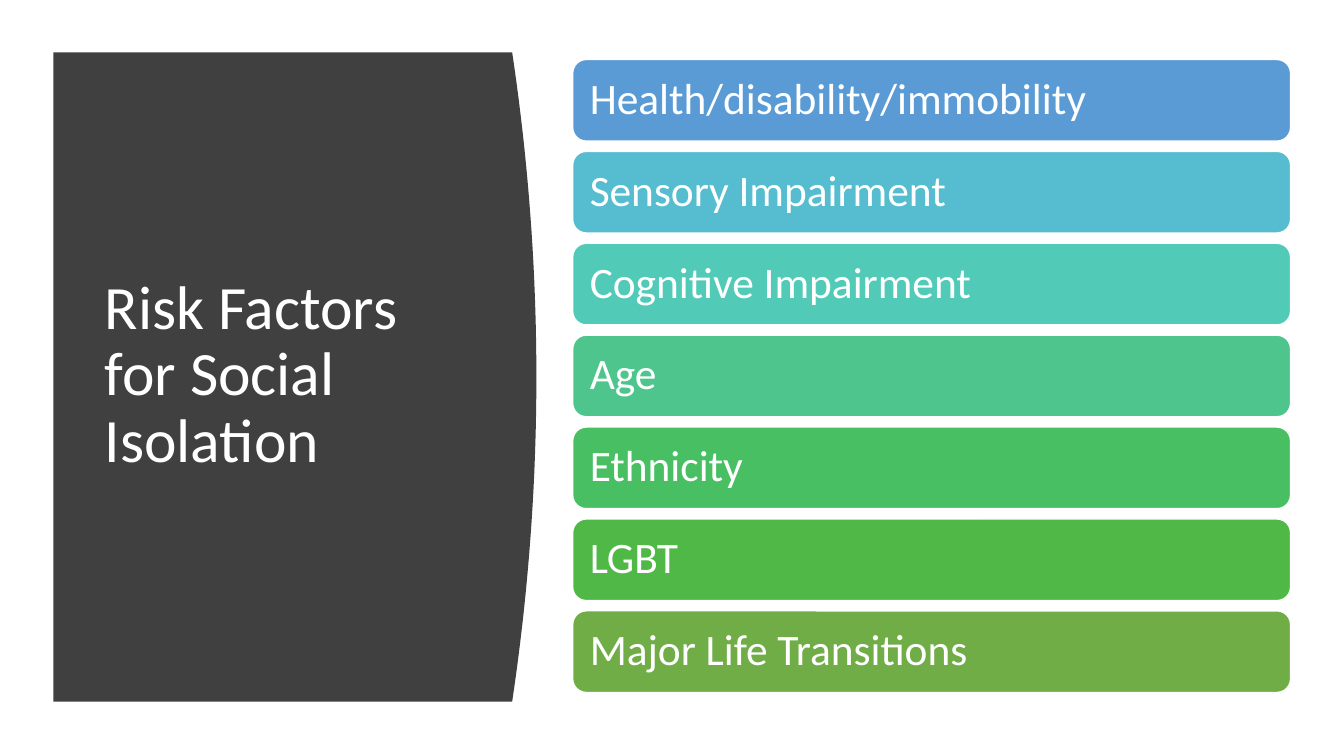
from pptx import Presentation
from pptx.dml.color import RGBColor
from pptx.enum.shapes import MSO_SHAPE
from pptx.enum.text import MSO_ANCHOR, PP_ALIGN
from pptx.util import Inches, Pt

ROUNDED = MSO_SHAPE.ROUNDED_RECTANGLE
MIDDLE = MSO_ANCHOR.MIDDLE
LEFT = PP_ALIGN.LEFT
WHITE = RGBColor(0xFF, 0xFF, 0xFF)
CHARCOAL = RGBColor(0x40, 0x40, 0x40)
FONT = "Calibri"

HEADING = "Risk Factors for Social Isolation"
RISK_FACTORS = [
    ("Health/disability/immobility", RGBColor(0x5B, 0x9B, 0xD5)),
    ("Sensory Impairment", RGBColor(0x56, 0xBC, 0xD0)),
    ("Cognitive Impairment", RGBColor(0x52, 0xCA, 0xB8)),
    ("Age", RGBColor(0x4D, 0xC5, 0x8D)),
    ("Ethnicity", RGBColor(0x49, 0xBF, 0x64)),
    ("LGBT", RGBColor(0x50, 0xB8, 0x46)),
    ("Major Life Transitions", RGBColor(0x70, 0xAD, 0x47)),
]

PANEL_LEFT, PANEL_TOP, PANEL_BOTTOM = 0.53, 0.52, 6.96
PANEL_CORNER, PANEL_BULGE = 5.08, 0.24
CURVE_STEPS = 40
BAR_LEFT, BAR_WIDTH, BAR_HEIGHT = 5.68, 7.12, 0.81
FIRST_BAR_TOP, LAST_BAR_TOP = 0.59, 6.06
BAR_INSET = 0.13


def write(shape, words, size):
    frame = shape.text_frame
    frame.text = words
    frame.word_wrap = True
    frame.vertical_anchor = MIDDLE
    paragraph = frame.paragraphs[0]
    paragraph.alignment = LEFT
    paragraph.line_spacing = 0.9
    font = paragraph.runs[0].font
    font.name = FONT
    font.size = Pt(size)
    font.color.rgb = WHITE
    return frame


def curve_point(step):
    t = step / CURVE_STEPS
    x = PANEL_CORNER + PANEL_BULGE * 4 * t * (1 - t)
    y = PANEL_TOP + (PANEL_BOTTOM - PANEL_TOP) * t
    return Inches(x), Inches(y)


def add_panel(slide):
    outline = slide.shapes.build_freeform(Inches(PANEL_LEFT), Inches(PANEL_TOP))
    edge = [curve_point(step) for step in range(CURVE_STEPS + 1)]
    outline.add_line_segments(edge + [(Inches(PANEL_LEFT), Inches(PANEL_BOTTOM))])
    panel = outline.convert_to_shape()
    panel.shadow.inherit = False
    panel.fill.solid()
    panel.fill.fore_color.rgb = CHARCOAL
    panel.line.fill.background()
    heading = slide.shapes.add_textbox(
        Inches(0.94), Inches(1.11), Inches(3.74), Inches(5.24))
    write(heading, HEADING, 44)


def add_bars(slide):
    pitch = (LAST_BAR_TOP - FIRST_BAR_TOP) / (len(RISK_FACTORS) - 1)
    for index, (factor, color) in enumerate(RISK_FACTORS):
        bar = slide.shapes.add_shape(
            ROUNDED, Inches(BAR_LEFT), Inches(FIRST_BAR_TOP + index * pitch),
            Inches(BAR_WIDTH), Inches(BAR_HEIGHT))
        bar.shadow.inherit = False
        bar.fill.solid()
        bar.fill.fore_color.rgb = color
        bar.line.color.rgb = WHITE
        bar.line.width = Pt(1)
        frame = write(bar, factor, 31)
        frame.margin_left = frame.margin_right = Inches(BAR_INSET)
        frame.margin_top = frame.margin_bottom = Inches(BAR_INSET)


def main():
    deck = Presentation()
    deck.slide_width, deck.slide_height = Inches(13.33), Inches(7.5)
    slide = deck.slides.add_slide(deck.slide_layouts[6])
    add_panel(slide)
    add_bars(slide)
    deck.save("out.pptx")


if __name__ == "__main__":
    main()
